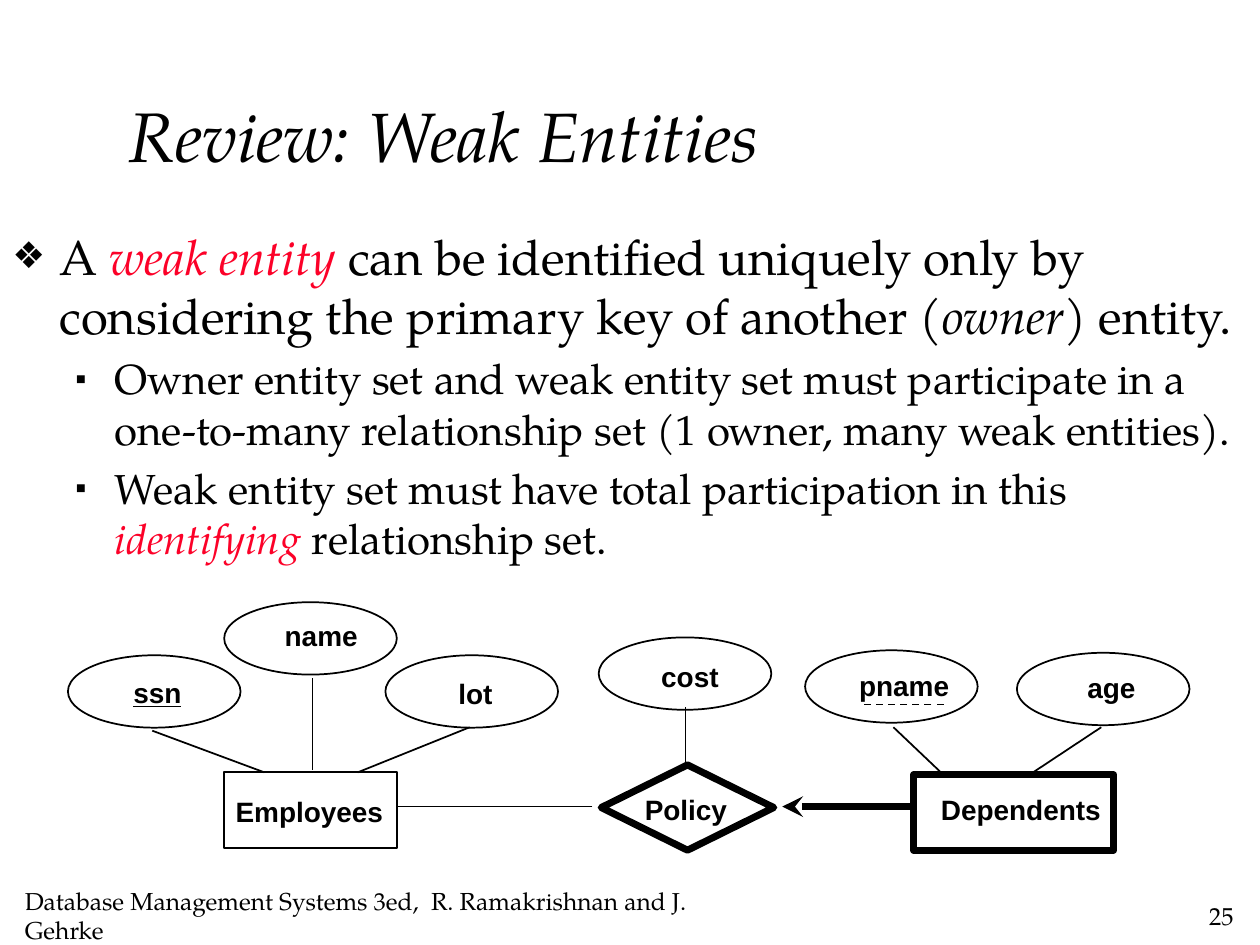
from dataclasses import dataclass, field

import lxml.etree
import pptx
import pptx.dml.color
import pptx.enum.dml
import pptx.enum.shapes
import pptx.enum.text
import pptx.oxml.ns
import pptx.util
from pptx.util import Cm

SERIF, SANS = "TeX Gyre Pagella", "Arial"
BLACK, RED = "000000", "FC0128"
THIN, THICK = 1, 4
LABEL_HEIGHT = 0.91
SHAPES = pptx.enum.shapes.MSO_SHAPE
ANCHOR = pptx.enum.text.MSO_ANCHOR
ALIGN = pptx.enum.text.PP_ALIGN


@dataclass
class Run:
    text: str
    color: str = BLACK
    format: dict = field(default_factory=dict)


@dataclass
class Bullet:
    character: str
    size: float
    indent: float
    hanging: float
    runs: list[Run]


@dataclass
class Node:
    """A diagram shape and its label, in centimetres."""
    name: str
    left: float
    top: float
    label_left: float
    label_top: float
    label_width: float
    kind: int = SHAPES.OVAL
    width: float = 3.48
    height: float = 1.46
    weight: float = THIN
    underline: bool = False


@dataclass
class Link:
    """A straight line from start to end, in centimetres."""
    start: tuple[float, float]
    end: tuple[float, float]
    weight: float = THIN
    dashed: bool = False
    arrow: bool = False


ITALIC = {"italic": True}
BULLETS = [
    Bullet("❖", 28, 0.95, 0.95, [
        Run("A "), Run("weak entity ", RED, ITALIC),
        Run("can be identified uniquely only by considering the primary key of another ("),
        Run("owner", BLACK, ITALIC), Run(") entity.")]),
    Bullet("▪", 24, 2.06, 0.79, [
        Run("Owner entity set and weak entity set must participate in a one-to-many "
            "relationship set (1 owner, many weak entities).")]),
    Bullet("▪", 24, 2.06, 0.79, [
        Run("Weak entity set must have total participation in this "),
        Run("identifying ", RED, ITALIC), Run("relationship set.")]),
]

NODES = [
    Node("ssn", 1.37, 13.21, 2.44, 13.49, 1.8, underline=True),
    Node("name", 4.52, 12.14, 5.49, 12.34, 2.3),
    Node("lot", 7.77, 13.21, 8.99, 13.51, 1.5),
    Node("cost", 12.07, 12.85, 13.08, 13.18, 2),
    Node("pname", 16.23, 13.11, 17.07, 13.36, 2.6),
    Node("age", 20.5, 13.16, 21.67, 13.39, 1.8),
    Node("Employees", 4.52, 15.57, 4.5, 15.9, 3.8, SHAPES.RECTANGLE, height=1.52),
    Node("Policy", 12.12, 15.42, 12.75, 15.85, 2.5, SHAPES.DIAMOND, height=1.72,
         weight=THICK),
    Node("Dependents", 18.42, 15.62, 18.72, 15.85, 4, SHAPES.RECTANGLE, 4.03, 1.52,
         THICK),
]

LINKS = [
    Link((19.02, 14.2), (17.32, 14.2), dashed=True),
    Link((6.3, 13.67), (6.3, 15.52)),
    Link((3.07, 14.73), (5.33, 15.57)),
    Link((9.47, 14.66), (7.21, 15.57)),
    Link((13.82, 15.42), (13.82, 14.25)),
    Link((18.01, 14.66), (19.02, 15.62)),
    Link((22.2, 14.66), (20.75, 15.62)),
    Link((11.94, 16.26), (8, 16.26)),
    Link((15.77, 16.26), (18.36, 16.26), THICK, arrow=True),
]


def rgb(color: str) -> pptx.dml.color.RGBColor:
    return pptx.dml.color.RGBColor.from_string(color)


def add_element(parent, tag: str, **attributes: str):
    element = lxml.etree.SubElement(parent, pptx.oxml.ns.qn(tag))
    for name, value in attributes.items():
        element.set(name, value)
    return element


def add_run(paragraph, run: Run, **base_format) -> None:
    text_run = paragraph.add_run()
    text_run.text = run.text
    for name, value in {**base_format, **run.format}.items():
        setattr(text_run.font, name, value)
    text_run.font.color.rgb = rgb(run.color)


def add_text_box(slide, left: float, top: float, width: float, height: float, **frame_format):
    """Add an empty text box and return its text frame."""
    shape = slide.shapes.add_textbox(Cm(left), Cm(top), Cm(width), Cm(height))
    for name, value in {"word_wrap": True, **frame_format}.items():
        setattr(shape.text_frame, name, value)
    return shape.text_frame


def add_line_text(slide, text: str, box: tuple[float, float, float, float], size: float,
                  alignment=ALIGN.LEFT, **font_format) -> None:
    """Add a vertically centred text of one paragraph."""
    frame = add_text_box(slide, *box, vertical_anchor=ANCHOR.MIDDLE)
    paragraph = frame.paragraphs[0]
    paragraph.alignment = alignment
    add_run(paragraph, Run(text), name=SERIF, size=pptx.util.Pt(size), **font_format)


def add_bullets(slide, bullets: list[Bullet]) -> None:
    frame = add_text_box(slide, 0, 4.45, 25.2, 13.77)
    for index, bullet in enumerate(bullets):
        paragraph = frame.add_paragraph() if index else frame.paragraphs[0]
        paragraph.space_before = pptx.util.Pt(bullet.size * 0.2)
        properties = paragraph._p.get_or_add_pPr()
        properties.set("marL", str(Cm(bullet.indent)))
        properties.set("indent", str(-Cm(bullet.hanging)))
        add_element(add_element(properties, "a:buClr"), "a:srgbClr", val=BLACK)
        add_element(properties, "a:buSzPct", val="75000")
        add_element(properties, "a:buFont", typeface=SANS)
        add_element(properties, "a:buChar", char=bullet.character)
        for run in bullet.runs:
            add_run(paragraph, run, name=SERIF, size=pptx.util.Pt(bullet.size), italic=False)


def add_node(slide, node: Node) -> None:
    shape = slide.shapes.add_shape(node.kind, Cm(node.left), Cm(node.top),
                                   Cm(node.width), Cm(node.height))
    shape.shadow.inherit = False
    shape.fill.background()
    shape.line.color.rgb = rgb(BLACK)
    shape.line.width = pptx.util.Pt(node.weight)
    frame = add_text_box(slide, node.label_left, node.label_top, node.label_width,
                         LABEL_HEIGHT)
    add_run(frame.paragraphs[0], Run(node.name), name=SANS, size=pptx.util.Pt(16),
            bold=True, underline=node.underline)


def add_link(slide, link: Link) -> None:
    connector = slide.shapes.add_connector(pptx.enum.shapes.MSO_CONNECTOR.STRAIGHT,
                                           *map(Cm, link.start + link.end))
    connector.line.color.rgb = rgb(BLACK)
    connector.line.width = pptx.util.Pt(link.weight)
    if link.dashed:
        connector.line.dash_style = pptx.enum.dml.MSO_LINE.DASH
    if link.arrow:
        add_element(connector.line._get_or_add_ln(), "a:headEnd", type="stealth")
    add_element(connector._element.spPr, "a:effectLst")


def main() -> None:
    presentation = pptx.Presentation()
    presentation.slide_width, presentation.slide_height = Cm(25.4), Cm(19.05)
    slide = presentation.slides.add_slide(presentation.slide_layouts[6])
    add_line_text(slide, "Database Management Systems 3ed,  R. Ramakrishnan and J. Gehrke",
                  (0.25, 18.03, 15.4, 0.84), 14)
    add_line_text(slide, "25", (24, 18.03, 1.12, 0.84), 14, ALIGN.RIGHT)
    add_line_text(slide, "Review: Weak Entities", (2.34, 1.17, 21.59, 3.07), 40, italic=True)
    add_bullets(slide, BULLETS)
    for node in NODES:
        add_node(slide, node)
    for link in LINKS:
        add_link(slide, link)
    presentation.save("out.pptx")


if __name__ == "__main__":
    main()
